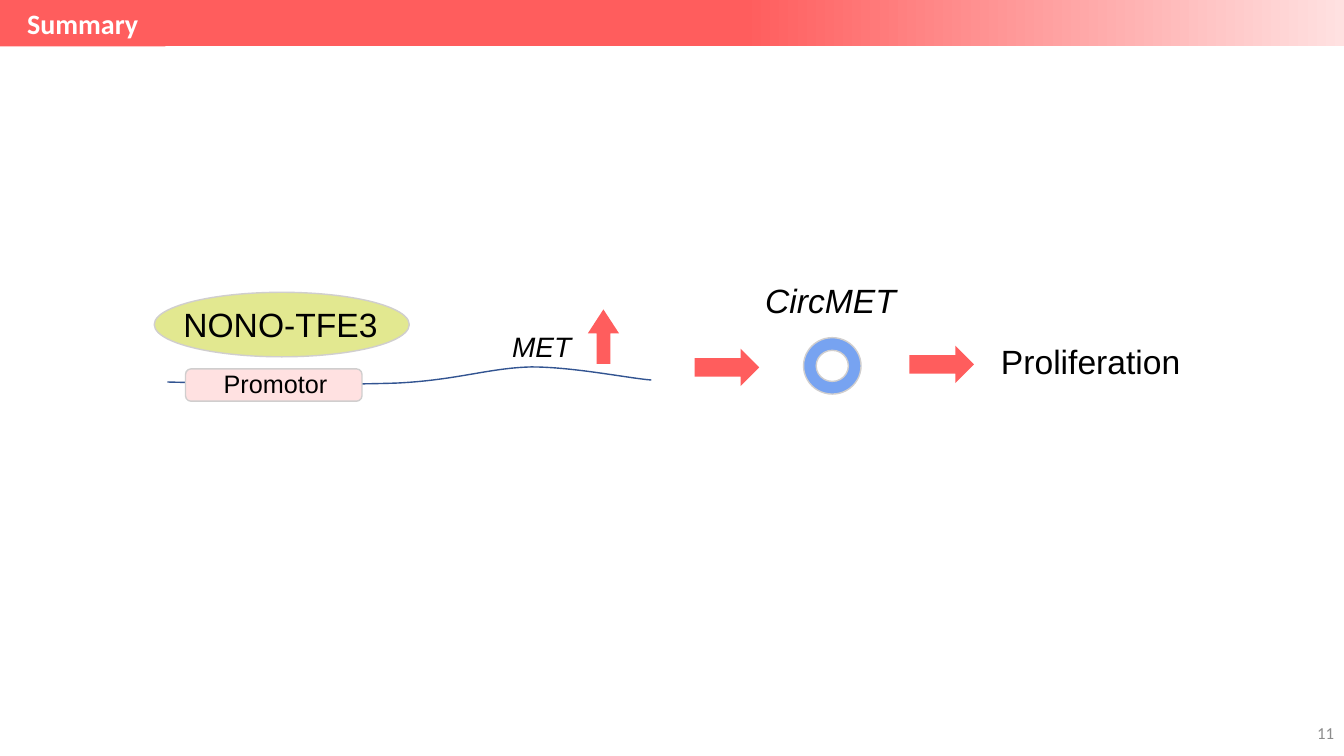
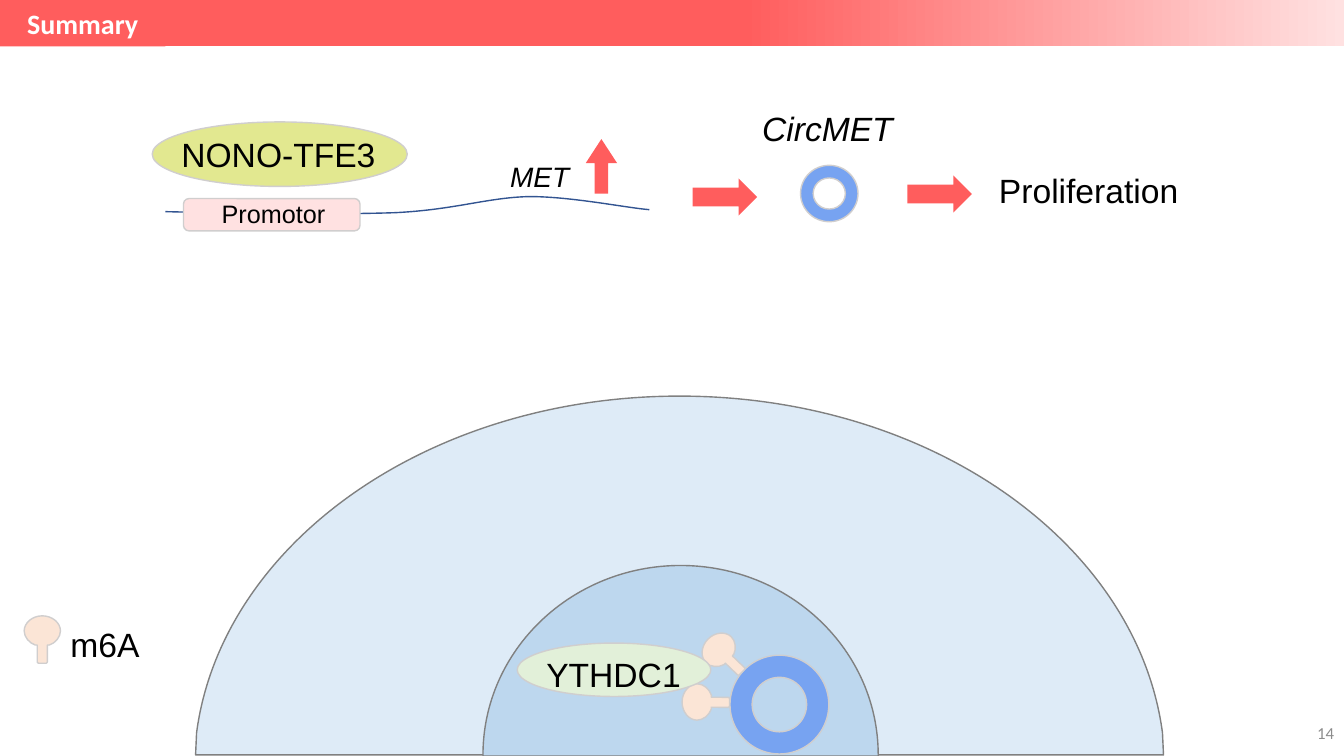
"""Build two summary slides on the NONO-TFE3 and CircMET pathway."""
from dataclasses import dataclass

import pptx
import pptx.dml.color
import pptx.enum.shapes
import pptx.enum.text
import pptx.oxml.ns
import pptx.util

SHAPE = pptx.enum.shapes.MSO_SHAPE
ALIGN = pptx.enum.text.PP_ALIGN
MIDDLE = pptx.enum.text.MSO_ANCHOR.MIDDLE
FIT = pptx.enum.text.MSO_AUTO_SIZE.SHAPE_TO_FIT_TEXT
WIDTH, HEIGHT = 13.33, 7.5


@dataclass(frozen=True)
class Theme:
    heading: str = "Calibri"
    body: str = "Arial"
    red: str = "FF5D5D"
    pink: str = "FFE1E1"
    lime: str = "E2E890"
    mint: str = "E2F0D9"
    peach: str = "FBE5D6"
    blue: str = "77A3F1"
    navy: str = "325491"
    cell: str = "DEEBF7"
    nucleus: str = "BDD7EE"
    rim: str = "808080"
    edge: str = "D0CECE"
    black: str = "000000"
    white: str = "FFFFFF"
    grey: str = "8C8C8C"
    large: int = 24
    title: int = 20
    medium: int = 18
    small: int = 12


THEME = Theme()
TITLE = "Summary"
TITLE_WIDTH, BAND_HEIGHT = 1.64, 0.46
RING = 0.224

# An outline segment holds one point for a line and three for a curve.
GENE_START = (0, 0.15)
GENE = [
    ((0.84, 0.17), (1.68, 0.18), (2.28, 0.16)),
    ((2.88, 0.13), (3.19, 0.01), (3.61, 0)),
    ((4.03, 0), (4.56, 0.11), (4.8, 0.13)),
]
PATHWAY_SHAPES = [
    (SHAPE.OVAL, (-0.13, -0.74, 2.53, 0.64), THEME.lime, THEME.edge),
    (SHAPE.UP_ARROW, (4.17, -0.57, 0.31, 0.54), THEME.red, None, (0.44, 0.768)),
    (SHAPE.RIGHT_ARROW, (5.23, -0.18, 0.64, 0.37), THEME.red),
    (SHAPE.ROUNDED_RECTANGLE, (0.18, 0.02, 1.75, 0.32), THEME.pink, THEME.edge),
    (SHAPE.RIGHT_ARROW, (7.36, -0.21, 0.64, 0.37), THEME.red),
]
PATHWAY_LABELS = [
    ("NONO‑TFE3", (0.06, -0.67, 2.15, 0.5), THEME.large),
    ("Promotor", (0.46, -0.03, 1.24, 0.4), THEME.medium),
    ("MET", (3.32, -0.42, 0.79, 0.44), THEME.title, True),
    ("Proliferation", (8.17, -0.31, 2, 0.5), THEME.large),
]
CIRCLE_SHAPES = [(SHAPE.DONUT, (0, 0, 0.57, 0.56), THEME.blue, THEME.edge, (RING,))]
CIRCLE_LABELS = [("CircMET", (-0.48, -0.62, 1.51, 0.5), THEME.large, True)]
DOMES = [
    ((6.74, 3.93), [((9.23, 3.93), (11.28, 5.39), (11.53, 7.27)), ((11.54, 7.49),)], THEME.cell),
    ((6.75, 5.61), [((7.83, 5.61), (8.71, 6.45), (8.71, 7.49)), ((8.71, 7.5),)], THEME.nucleus),
]
PIN_START = (0.18, 0)
PIN_HALF = [
    ((0.28, 0), (0.36, 0.07), (0.36, 0.15)),
    ((0.36, 0.21), (0.31, 0.27), (0.25, 0.29)),
    ((0.23, 0.29),),
    ((0.23, 0.46),),
    ((0.23, 0.47), (0.23, 0.47), (0.22, 0.47)),
]
PINS = [((6.82, 6.73), 270.7), ((7.01, 6.27), 313.8), ((0.24, 6.11), 0)]
PAGES = [
    {"number": "11", "pathway": (1.66, 3.64), "circle": (7.97, 3.35), "cell": False},
    {"number": "14", "pathway": (1.64, 1.95), "circle": (7.94, 1.64), "cell": True},
]


def inches(values):
    return [pptx.util.Inches(value) for value in values]


def rgb(code):
    return pptx.dml.color.RGBColor.from_string(code)


def shift(origin, place):
    return (origin[0] + place[0], origin[1] + place[1], *place[2:])


def paint(shape, fill, line):
    shape.shadow.inherit = False
    if fill:
        shape.fill.solid()
        shape.fill.fore_color.rgb = rgb(fill)
    else:
        shape.fill.background()
    if line:
        shape.line.color.rgb = rgb(line)
        shape.line.width = pptx.util.Pt(1)
    else:
        shape.line.fill.background()


def write(shape, text, size, color=THEME.black, font=THEME.body, align=ALIGN.LEFT,
          bold=False, italic=False):
    para = shape.text_frame.paragraphs[0]
    para.alignment = align
    span = para.add_run()
    span.text = text
    span.font.name = font
    span.font.size = pptx.util.Pt(size)
    span.font.color.rgb = rgb(color)
    span.font.bold = bold
    span.font.italic = italic


def add_shape(page, kind, place, fill, line=None, adjustments=()):
    shape = page.shapes.add_shape(kind, *inches(place))
    paint(shape, fill, line)
    for index, value in enumerate(adjustments):
        shape.adjustments[index] = value
    return shape


def add_label(page, text, place, size, italic=False, align=ALIGN.LEFT):
    box = page.shapes.add_textbox(*inches(place))
    box.text_frame.word_wrap = False
    box.text_frame.auto_size = FIT
    write(box, text, size, italic=italic, align=align)


def mirrored(start, half):
    """Complete an outline by reflecting its right half about the start point."""
    points = [start] + [point for segment in half for point in segment]
    back = iter([(2 * start[0] - x, y) for x, y in reversed(points)])
    sizes = [1] + [len(segment) for segment in reversed(half)]
    return half + [tuple(next(back) for _ in range(size)) for size in sizes]


def add_outline(page, start, segments, fill, line, origin=(0, 0), closed=True):
    """Draw lines and Bézier curves as one freeform."""
    def locate(point):
        return tuple(inches(shift(origin, point)))

    builder = page.shapes.build_freeform(*locate(start), scale=1.0)
    builder.add_line_segments([locate(point) for segment in segments for point in segment], close=closed)
    shape = builder.convert_to_shape()
    paint(shape, fill, line)
    steps = iter(list(shape.element.iter(pptx.oxml.ns.qn("a:lnTo"))))
    for segment in segments:
        first, *others = [next(steps) for _ in segment]
        if others:
            first.tag = pptx.oxml.ns.qn("a:cubicBezTo")
        for other in others:
            first.append(other[0])
            other.getparent().remove(other)
    return shape


def add_frame(page, number):
    band = add_shape(page, SHAPE.RECTANGLE, (TITLE_WIDTH, 0, WIDTH - TITLE_WIDTH, BAND_HEIGHT), THEME.red)
    band.fill.gradient()
    band.fill.gradient_angle = 180
    for stop, (position, color) in zip(band.fill.gradient_stops, [(0, THEME.pink), (0.51, THEME.red)]):
        stop.position = position
        stop.color.rgb = rgb(color)
    title = add_shape(page, SHAPE.RECTANGLE, (0, 0, TITLE_WIDTH, BAND_HEIGHT), THEME.red)
    title.text_frame.vertical_anchor = MIDDLE
    write(title, TITLE, THEME.title, THEME.white, THEME.heading, ALIGN.CENTER, bold=True)
    footer = page.shapes.add_textbox(*inches((WIDTH - 3, 7.07, 3, 0.4)))
    footer.text_frame.word_wrap = True
    footer.text_frame.vertical_anchor = MIDDLE
    write(footer, number, THEME.small, THEME.grey, THEME.heading, ALIGN.RIGHT)


def add_group(page, origin, shapes, labels):
    for kind, place, *look in shapes:
        add_shape(page, kind, shift(origin, place), *look)
    for text, place, *style in labels:
        add_label(page, text, shift(origin, place), *style)


def add_domes(page):
    for start, half, fill in DOMES:
        add_outline(page, start, mirrored(start, half), fill, THEME.rim)


def add_cell_parts(page):
    add_shape(page, SHAPE.DONUT, (7.24, 6.5, 0.98, 0.98), THEME.blue, THEME.edge, (RING,))
    for origin, rotation in PINS:
        pin = add_outline(page, PIN_START, mirrored(PIN_START, PIN_HALF), THEME.peach, THEME.edge, origin)
        pin.rotation = rotation
    add_label(page, "m6A", (0.6, 6.14, 0.89, 0.5), THEME.large)
    add_shape(page, SHAPE.OVAL, (5.13, 6.38, 1.92, 0.53), THEME.mint, THEME.edge)
    add_label(page, "YTHDC1", (5.27, 6.44, 1.63, 0.5), THEME.large, align=ALIGN.CENTER)


def main():
    deck = pptx.Presentation()
    deck.slide_width, deck.slide_height = inches((WIDTH, HEIGHT))
    for content in PAGES:
        page = deck.slides.add_slide(deck.slide_layouts[6])
        if content["cell"]:
            add_domes(page)
        add_outline(page, GENE_START, GENE, None, THEME.navy, content["pathway"], closed=False)
        add_frame(page, content["number"])
        add_group(page, content["pathway"], PATHWAY_SHAPES, PATHWAY_LABELS)
        if content["cell"]:
            add_cell_parts(page)
        add_group(page, content["circle"], CIRCLE_SHAPES, CIRCLE_LABELS)
    deck.save("out.pptx")


if __name__ == "__main__":
    main()
